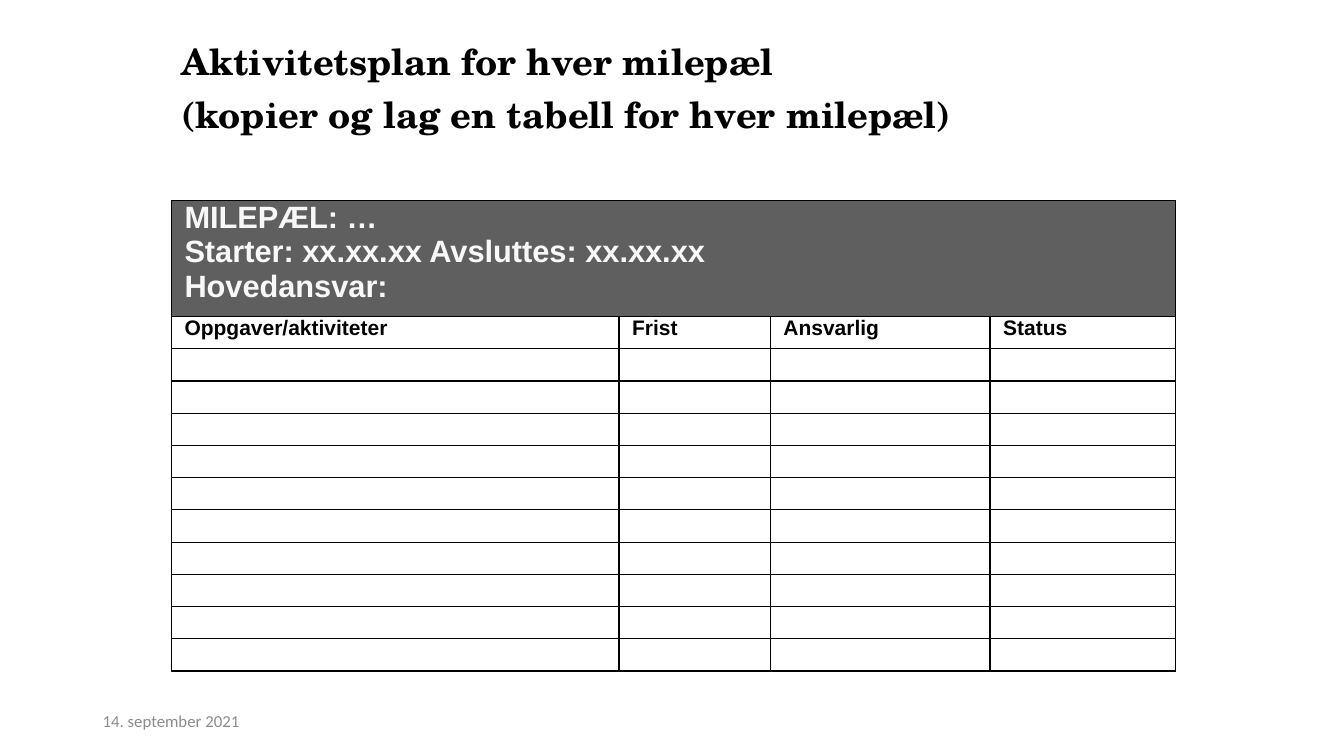
from dataclasses import dataclass

import pptx
import pptx.dml.color
import pptx.enum.text
import pptx.oxml
import pptx.oxml.ns
import pptx.util
from lxml import etree

Inches = pptx.util.Inches
Anchor = pptx.enum.text.MSO_ANCHOR


@dataclass(frozen=True)
class Theme:
    heading_font: str = "TeX Gyre Schola"
    table_font: str = "Arial"
    date_font: str = "Calibri"
    black: str = "000000"
    white: str = "FFFFFF"
    milestone_fill: str = "5F5F5F"
    milestone_text: str = "F8F8F8"
    date_text: str = "8C8C8C"
    heading_size: float = 25.9
    milestone_size: float = 22
    column_size: float = 15
    date_size: float = 12
    border_width: float = 1


@dataclass(frozen=True)
class Column:
    label: str
    width: float


THEME = Theme()
COLUMNS = [
    Column("Oppgaver/aktiviteter", 4.44),
    Column("Frist", 1.5),
    Column("Ansvarlig", 2.18),
    Column("Status", 1.84),
]
LEFT, WIDTH = 1.7, 9.97
TABLE_TOP = 1.99
MILESTONE_HEIGHT, ROW_HEIGHT = 1.15, 0.32
ACTIVITY_ROWS = 10


def write(frame, text: str, *, font: str, size: float, color: str, bold: bool = False,
          line_spacing: float = 1, before: float = 0, after: float = 0) -> None:
    """Fill a text frame, one paragraph for each line of text."""
    frame.word_wrap = True
    for index, line in enumerate(text.split("\n")):
        paragraph = frame.add_paragraph() if index else frame.paragraphs[0]
        paragraph.alignment = pptx.enum.text.PP_ALIGN.LEFT
        paragraph.line_spacing = line_spacing
        paragraph.space_before = pptx.util.Pt(before if index else 0)
        paragraph.space_after = pptx.util.Pt(after)
        run = paragraph.add_run()
        run.text = line
        run.font.name = font
        run.font.size = pptx.util.Pt(size)
        run.font.bold = bold
        run.font.color.rgb = pptx.dml.color.RGBColor.from_string(color)


def format_cell(cell, fill: str) -> None:
    """Set the insets, borders and fill of a table cell."""
    cell.margin_left = cell.margin_right = Inches(0.13)
    cell.margin_top = cell.margin_bottom = 0
    properties = cell._tc.get_or_add_tcPr()
    for side in ("lnL", "lnR", "lnT", "lnB"):
        border = etree.SubElement(properties, pptx.oxml.ns.qn(f"a:{side}"),
                                  w=str(pptx.util.Pt(THEME.border_width)))
        line_fill = etree.SubElement(border, pptx.oxml.ns.qn("a:solidFill"))
        etree.SubElement(line_fill, pptx.oxml.ns.qn("a:srgbClr"), val=THEME.black)
    cell.fill.solid()
    cell.fill.fore_color.rgb = pptx.dml.color.RGBColor.from_string(fill)


def add_heading(slide) -> None:
    heading = slide.shapes.title
    heading.left, heading.top = Inches(LEFT), Inches(0.46)
    heading.width, heading.height = Inches(WIDTH), Inches(0.94)
    frame = heading.text_frame
    frame.auto_size = pptx.enum.text.MSO_AUTO_SIZE.NONE
    frame.vertical_anchor = Anchor.TOP
    write(frame, "Aktivitetsplan for hver milepæl\n(kopier og lag en tabell for hver milepæl)",
          font=THEME.heading_font, size=THEME.heading_size, color=THEME.black, bold=True,
          line_spacing=0.7, before=10, after=6)


def add_activity_table(slide) -> None:
    row_count = ACTIVITY_ROWS + 2
    height = MILESTONE_HEIGHT + (row_count - 1) * ROW_HEIGHT
    plan = slide.shapes.add_table(row_count, len(COLUMNS), Inches(LEFT), Inches(TABLE_TOP),
                                  Inches(WIDTH), Inches(height)).table
    plan.first_row = plan.horz_banding = False
    for index, column in enumerate(COLUMNS):
        plan.columns[index].width = Inches(column.width)
    for index, row in enumerate(plan.rows):
        row.height = Inches(ROW_HEIGHT if index else MILESTONE_HEIGHT)
        for cell in row.cells:
            format_cell(cell, THEME.white if index else THEME.milestone_fill)

    # Milestone band
    milestone = plan.cell(0, 0)
    milestone.merge(plan.cell(0, len(COLUMNS) - 1))
    write(milestone.text_frame,
          "MILEPÆL: …\nStarter: xx.xx.xx Avsluttes: xx.xx.xx\nHovedansvar:",
          font=THEME.table_font, size=THEME.milestone_size, color=THEME.milestone_text, bold=True)

    # Column labels
    for index, column in enumerate(COLUMNS):
        write(plan.cell(1, index).text_frame, column.label, font=THEME.table_font,
              size=THEME.column_size, color=THEME.black, bold=True)

    # Text size of the empty activity rows
    for row in range(2, row_count):
        for index in range(len(COLUMNS)):
            paragraph = plan.cell(row, index).text_frame.paragraphs[0]
            etree.SubElement(paragraph._p, pptx.oxml.ns.qn("a:endParaRPr"),
                             sz=str(int(THEME.column_size * 100)))


def add_date(slide) -> None:
    date = slide.shapes.add_textbox(Inches(0.92), Inches(6.95), Inches(3), Inches(0.4))
    date.text_frame.vertical_anchor = Anchor.MIDDLE
    write(date.text_frame, "14. september 2021", font=THEME.date_font,
          size=THEME.date_size, color=THEME.date_text, after=6)


def main() -> None:
    deck = pptx.Presentation()
    deck.slide_width, deck.slide_height = Inches(13.33), Inches(7.5)
    slide = deck.slides.add_slide(deck.slide_layouts.get_by_name("Title Only"))
    add_heading(slide)
    add_activity_table(slide)
    add_date(slide)
    deck.save("out.pptx")


if __name__ == "__main__":
    main()
